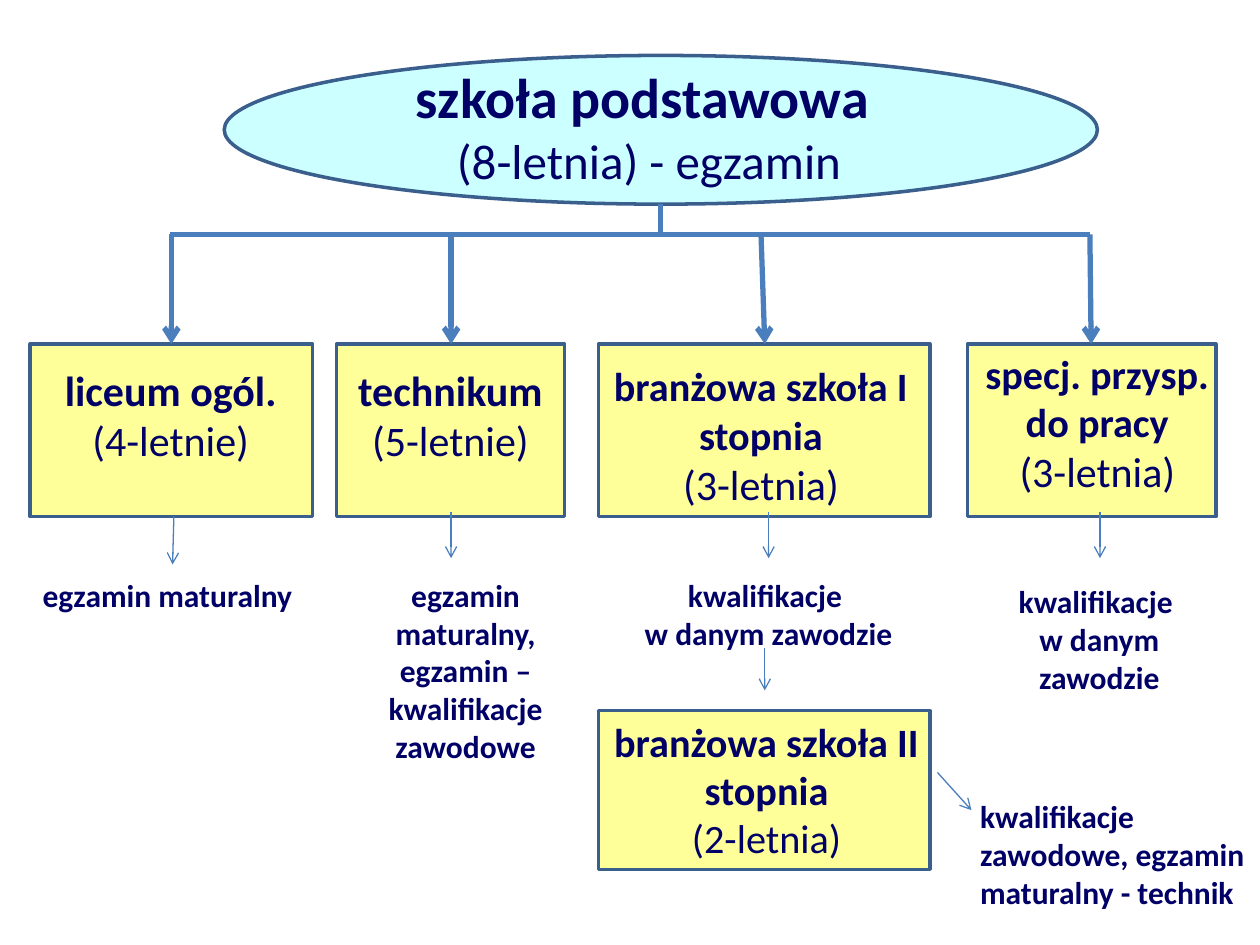
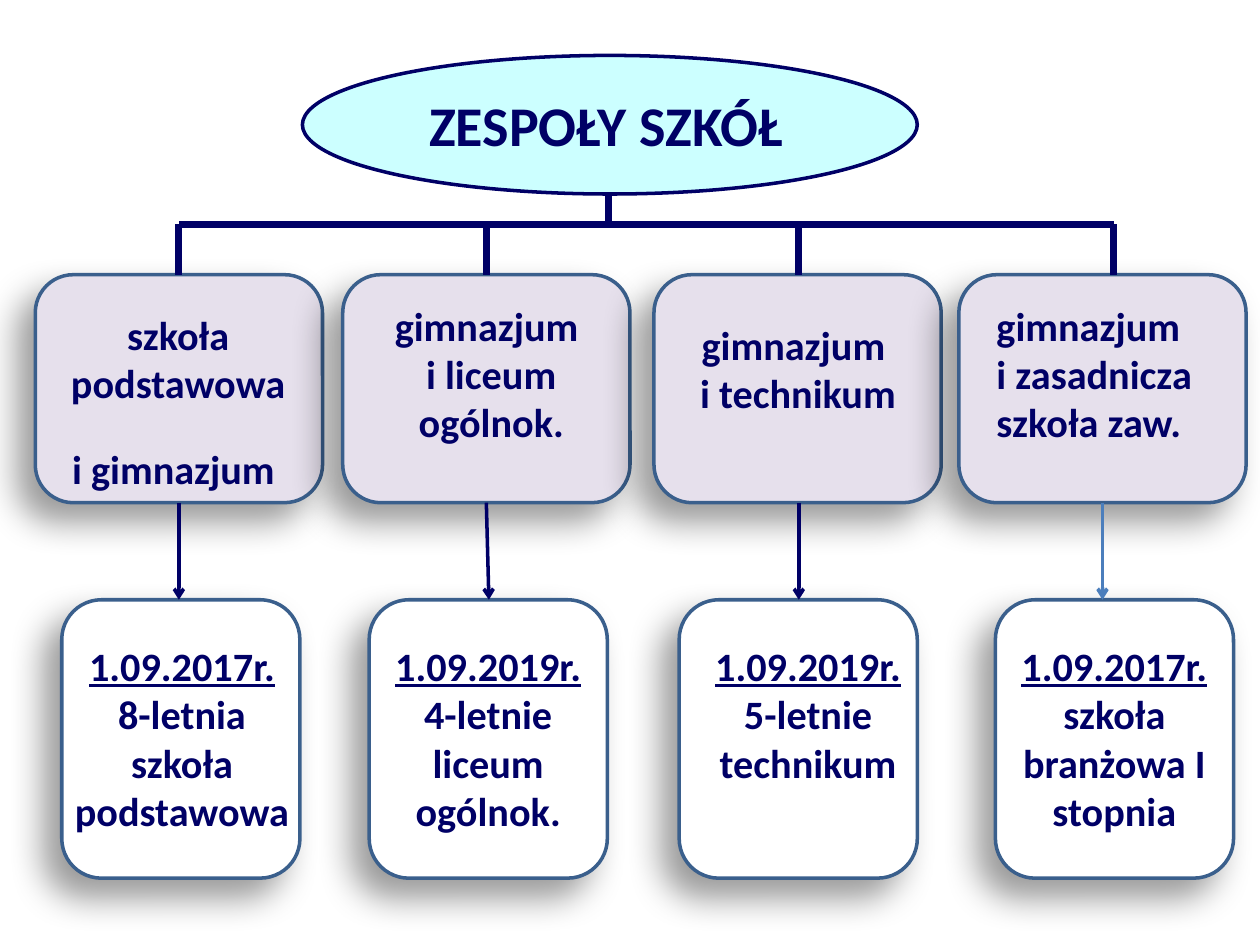
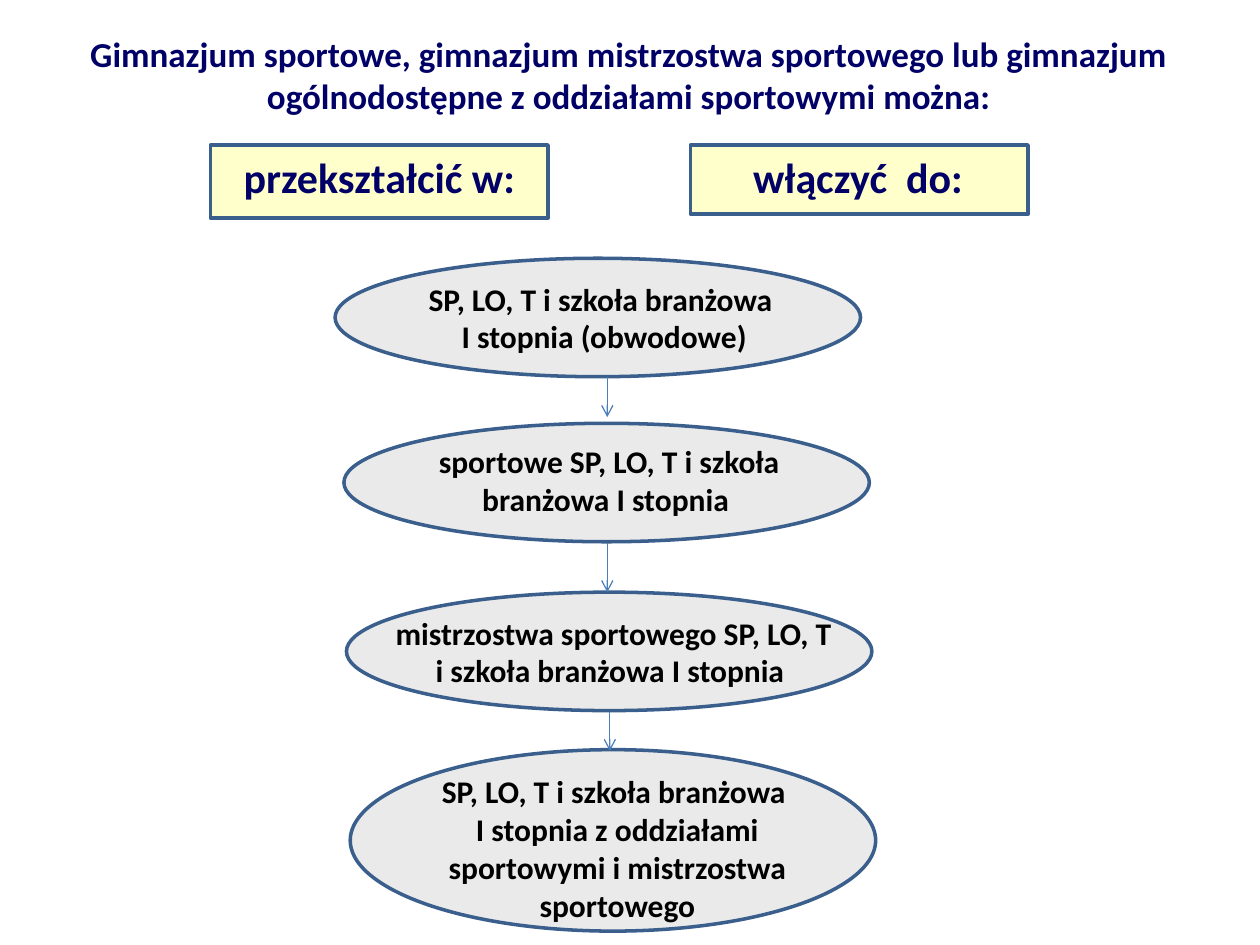
from lxml import etree
from pptx import Presentation
from pptx.dml.color import RGBColor
from pptx.enum.shapes import MSO_CONNECTOR, MSO_SHAPE
from pptx.enum.text import MSO_ANCHOR, MSO_AUTO_SIZE, PP_ALIGN
from pptx.oxml.ns import qn
from pptx.util import Inches, Pt

# Shared colours, shapes and font
NAVY = RGBColor(0x00, 0x00, 0x66)
EDGE = RGBColor(0x3A, 0x5F, 0x8C)
BLUE = RGBColor(0x4B, 0x7E, 0xBC)
CYAN = RGBColor(0xCC, 0xFF, 0xFF)
YELLOW = RGBColor(0xFF, 0xFF, 0x99)
CREAM = RGBColor(0xFF, 0xFF, 0xCC)
LILAC = RGBColor(0xE6, 0xE0, 0xEC)
GREY = RGBColor(0xEA, 0xEA, 0xEA)
WHITE = RGBColor(0xFF, 0xFF, 0xFF)
BLACK = RGBColor(0x00, 0x00, 0x00)
RECT, ROUND, OVAL = MSO_SHAPE.RECTANGLE, MSO_SHAPE.ROUNDED_RECTANGLE, MSO_SHAPE.OVAL
FONT = "Calibri"


def put(slide, spot, lines=(), kind=None, fill=None, edge=EDGE, ink=NAVY,
        align=PP_ALIGN.CENTER, shade=False):
    """Add a shape, or a text box if no kind is given; lines hold (text, size, style)."""
    place = [Inches(n) for n in spot]
    if kind is None:
        item = slide.shapes.add_textbox(*place)
        item.text_frame.auto_size = MSO_AUTO_SIZE.SHAPE_TO_FIT_TEXT
    else:
        item = slide.shapes.add_shape(kind, *place)
        item.fill.solid()
        item.fill.fore_color.rgb = fill
        item.line.color.rgb = edge
        item.line.width = Pt(2)
        item.shadow.inherit = False
        item.text_frame.vertical_anchor = MSO_ANCHOR.MIDDLE
    if shade:
        glow = etree.SubElement(item.element.spPr.find(qn("a:effectLst")), qn("a:outerShdw"),
                                blurRad=str(Pt(20)), dist=str(Pt(14)),
                                dir=str(135 * 60000), rotWithShape="0")
        tint = etree.SubElement(glow, qn("a:srgbClr"), val="000000")
        etree.SubElement(tint, qn("a:alpha"), val="40000")
    frame = item.text_frame
    frame.word_wrap = True
    for i, (text, size, style) in enumerate(lines):
        para = frame.add_paragraph() if i else frame.paragraphs[0]
        para.text = text
        para.alignment = align
        for run in para.runs:
            run.font.name = FONT
            run.font.size = Pt(size)
            run.font.bold = "b" in style
            run.font.underline = "u" in style
            run.font.color.rgb = ink


def link(slide, x1, y1, x2, y2, width=0.75, color=BLUE, arrow=True):
    """Add a straight line, with an arrowhead at its end if wanted."""
    line = slide.shapes.add_connector(
        MSO_CONNECTOR.STRAIGHT, Inches(x1), Inches(y1), Inches(x2), Inches(y2))
    line.line.color.rgb = color
    line.line.width = Pt(width)
    props = line.element.spPr
    if arrow:
        etree.SubElement(props.find(qn("a:ln")), qn("a:tailEnd"), type="arrow")
    etree.SubElement(props, qn("a:effectLst"))


deck = Presentation()
deck.slide_width, deck.slide_height = Inches(10), Inches(7.5)
blank = deck.slide_layouts[6]

# Slide 1: paths after primary school
page = deck.slides.add_slide(blank)
put(page, (1.78, 0.44, 6.93, 1.18), kind=OVAL, fill=CYAN)
put(page, (3.18, 0.45, 3.94, 1.11),
    [("szkoła podstawowa ", 32, "b"), ("(8-letnia) - egzamin", 28, "")])

# School boxes: left, width, label place, name, name size, years
schools = [
    (0.24, 2.24, (0.33, 2.84, 2.05, 0.91), "liceum ogól.", 24, "(4-letnie)"),
    (2.67, 1.81, (2.58, 2.84, 1.99, 0.91), "technikum", 24, "(5-letnie)"),
    (4.75, 2.63, (4.7, 2.82, 2.68, 1.28), "branżowa szkoła I stopnia", 23, "(3-letnia)"),
    (7.68, 1.97, (7.71, 2.72, 2, 1.28), "specj. przysp. do pracy", 23, "(3-letnia)"),
]
for left, wide, spot, name, size, years in schools:
    put(page, (left, 2.73, wide, 1.37), kind=RECT, fill=YELLOW)
    put(page, spot, [(name, size, "b"), (years, 24, "")])
put(page, (4.75, 5.64, 2.63, 1.26), kind=RECT, fill=YELLOW)
put(page, (4.77, 5.64, 2.63, 1.28),
    [("branżowa szkoła II stopnia", 23, "b"), ("(2-letnia)", 23, "")])

# Exams and qualifications
exams = [
    ((0.24, 4.52, 2.24, 0.4), "egzamin maturalny", PP_ALIGN.LEFT),
    ((2.79, 4.52, 1.81, 1.62), "egzamin maturalny, egzamin – kwalifikacje zawodowe",
     PP_ALIGN.CENTER),
    ((5, 4.52, 2.2, 0.71), "kwalifikacje \nw danym zawodzie", PP_ALIGN.CENTER),
    ((7.86, 4.57, 1.73, 1.01), "kwalifikacje \nw danym zawodzie", PP_ALIGN.CENTER),
    ((7.68, 6.28, 2.32, 1.01), "kwalifikacje zawodowe, egzamin maturalny - technik",
     PP_ALIGN.LEFT),
]
for spot, text, align in exams:
    put(page, spot, [(text, 18, "b")], align=align)

# Thin arrows, then the thick tree
link(page, 1.38, 4.1, 1.37, 4.48)
for x in (3.58, 6.1, 8.73):
    link(page, x, 4.06, x, 4.43)
link(page, 6.07, 5.14, 6.07, 5.48)
link(page, 7.44, 6.13, 7.71, 6.43)
link(page, 5.24, 1.62, 5.24, 1.86, 3, arrow=False)
link(page, 1.35, 1.86, 8.65, 1.86, 3, arrow=False)
for top, end in [(1.36, 1.36), (3.58, 3.58), (6.04, 6.07), (8.65, 8.66)]:
    link(page, top, 1.86, end, 2.73, 3)

# Slide 2: school groups
page = deck.slides.add_slide(blank)
put(page, (2.4, 0.44, 4.88, 1.1), kind=OVAL, fill=CYAN, edge=NAVY)
put(page, (3.04, 0.67, 3.54, 0.64), [("ZESPOŁY SZKÓŁ", 32, "b")])

# Upper row: left, label place, text, alignment
groups = [
    (0.28, (0.45, 2.41, 1.93, 1.26), "szkoła podstawowa \ni gimnazjum ", PP_ALIGN.CENTER),
    (2.72, (2.98, 2.34, 1.84, 1.26), "gimnazjum \ni liceum ogólnok.", PP_ALIGN.CENTER),
    (5.19, (5.39, 2.49, 1.89, 1.18), "gimnazjum \ni technikum", PP_ALIGN.CENTER),
    (7.61, (7.81, 2.34, 1.89, 1.57), "gimnazjum \ni zasadnicza szkoła zaw.", PP_ALIGN.LEFT),
]
for left, *rest in groups:
    put(page, (left, 2.18, 2.28, 1.81), kind=ROUND, fill=LILAC, shade=True)
for left, spot, text, align in groups:
    put(page, spot, [(text, 23, "b")], align=align)

# Lower row: left, label left and width, date, new school
results = [
    (0.49, 0.49, 1.91, "1.09.2017r.", "8-letnia szkoła podstawowa"),
    (2.93, 2.93, 1.89, "1.09.2019r.", "4-letnie liceum ogólnok."),
    (5.39, 5.55, 1.73, "1.09.2019r.", "5-letnie technikum"),
    (7.9, 7.99, 1.71, "1.09.2017r.", "szkoła branżowa I stopnia"),
]
for left, start, wide, date, name in results:
    put(page, (left, 4.76, 1.89, 2.21), kind=ROUND, fill=WHITE, shade=True)
    put(page, (start, 5.04, wide, 1.65), [(date, 23, "bu"), (name, 23, "b")])

# Tree and arrows
link(page, 4.83, 1.55, 4.83, 1.78, 4, NAVY, False)
link(page, 1.42, 1.78, 8.84, 1.78, 4, NAVY, False)
for x in (1.42, 3.86, 6.34, 8.84):
    link(page, x, 1.78, x, 2.18, 4, NAVY, False)
for top, end, color in [(1.42, 1.42, NAVY), (3.86, 3.88, NAVY),
                        (6.34, 6.34, NAVY), (8.75, 8.75, BLUE)]:
    link(page, top, 3.99, end, 4.76, 2, color)

# Slide 3: sports schools
page = deck.slides.add_slide(blank)
put(page, (0, 0.21, 9.98, 0.8),
    [("Gimnazjum sportowe, gimnazjum mistrzostwa sportowego lub gimnazjum "
      "ogólnodostępne z oddziałami sportowymi można:", 20, "b")])

# Two options
for left, high, start, wide, text in [(1.67, 0.58, 1.67, 2.68, "przekształcić w:"),
                                      (5.48, 0.55, 5.71, 2.2, "włączyć  do:")]:
    put(page, (left, 1.15, 2.68, high), kind=RECT, fill=CREAM)
    put(page, (start, 1.15, wide, 0.5), [(text, 24, "b")])

# Chain of ovals: left, top, height, label place, text
chain = [
    (2.66, 2.05, 0.94, (3.14, 2.17, 3.31, 0.71),
     "SP, LO, T i szkoła branżowa \nI stopnia (obwodowe)"),
    (2.73, 3.36, 0.94, (3.18, 3.46, 3.31, 0.71),
     "sportowe SP, LO, T i szkoła branżowa I stopnia "),
    (2.75, 4.7, 0.94, (3.02, 4.82, 3.7, 0.71),
     "mistrzostwa sportowego SP, LO, T i szkoła branżowa I stopnia "),
    (2.78, 5.95, 1.44, (3.05, 6.08, 3.7, 1.31),
     "SP, LO, T i szkoła branżowa \nI stopnia z oddziałami sportowymi i mistrzostwa sportowego"),
]
for left, top, high, spot, text in chain:
    put(page, (left, top, 4.17, high), kind=OVAL, fill=GREY)
    put(page, spot, [(text, 18, "b")], ink=BLACK)
for x, top, end in [(4.82, 2.99, 3.31), (4.82, 4.31, 4.7), (4.84, 5.65, 5.96)]:
    link(page, x, top, x, end)

deck.save("out.pptx")
